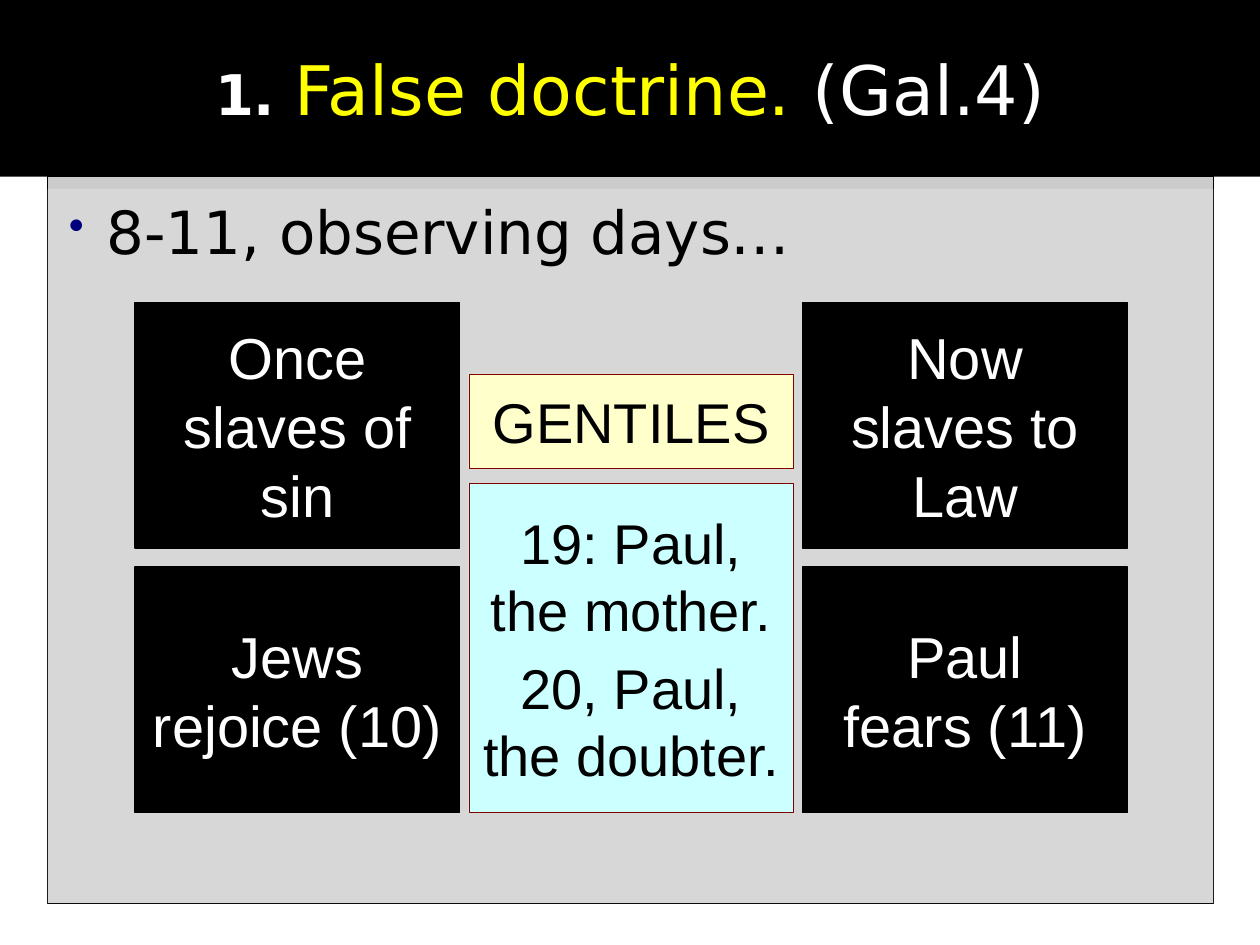
from dataclasses import dataclass
from typing import Optional

from lxml import etree
from pptx import Presentation
from pptx.dml.color import RGBColor
from pptx.enum.shapes import MSO_SHAPE
from pptx.enum.text import MSO_ANCHOR, MSO_AUTO_SIZE, PP_ALIGN
from pptx.oxml.ns import qn
from pptx.util import Cm, Pt

RECT = MSO_SHAPE.RECTANGLE
TOP, MIDDLE = MSO_ANCHOR.TOP, MSO_ANCHOR.MIDDLE
LEFT, CENTER = PP_ALIGN.LEFT, PP_ALIGN.CENTER
NO_AUTOFIT = MSO_AUTO_SIZE.NONE


@dataclass(frozen=True)
class Theme:
    black: str = "000000"
    white: str = "FFFFFF"
    yellow: str = "FFFF00"
    cream: str = "FFFFCC"
    aqua: str = "CCFFFF"
    maroon: str = "800000"
    navy: str = "00007D"
    panel: str = "BFBFBF"
    veil: str = "F2F2F2"
    heading_font: str = "DejaVu Sans"
    box_font: str = "Arial"
    number_size: int = 32
    title_size: int = 39
    body_size: int = 34
    outer_size: int = 33
    center_size: int = 32


T = Theme()


@dataclass(frozen=True)
class Run:
    text: str
    size: int
    color: str
    font: str = T.box_font
    bold: bool = False


@dataclass(frozen=True)
class Box:
    left: float
    top: float
    width: float
    height: float
    fill: str
    line: Optional[str] = None
    line_width: float = 0.75
    alpha: int = 100


def draw_box(slide, box: Box):
    sp = slide.shapes.add_shape(
        RECT, Cm(box.left), Cm(box.top), Cm(box.width), Cm(box.height))
    sp.shadow.inherit = False
    sp.fill.solid()
    sp.fill.fore_color.rgb = RGBColor.from_string(box.fill)
    if box.alpha < 100:
        color = sp._element.spPr.find(qn("a:solidFill"))[0]
        etree.SubElement(color, qn("a:alpha"), val=str(box.alpha * 1000))
    if box.line:
        sp.line.color.rgb = RGBColor.from_string(box.line)
        sp.line.width = Pt(box.line_width)
    else:
        sp.line.fill.background()
    return sp


def write(sp, paragraphs: list[list[Run]], align=CENTER, anchor=MIDDLE,
          space_after: float = 0) -> None:
    tf = sp.text_frame
    tf.word_wrap = True
    tf.auto_size = NO_AUTOFIT
    tf.vertical_anchor = anchor
    for i, runs in enumerate(paragraphs):
        p = tf.paragraphs[0] if i == 0 else tf.add_paragraph()
        p.alignment = align
        if i < len(paragraphs) - 1:
            p.space_after = Pt(space_after)
        for run in runs:
            for n, line in enumerate(run.text.split("\n")):
                if n:
                    p.add_line_break()
                r = p.add_run()
                r.text = line
                r.font.name = run.font
                r.font.size = Pt(run.size)
                r.font.bold = run.bold
                r.font.color.rgb = RGBColor.from_string(run.color)


def add_bullet(p, char: str, color: str, percent: int) -> None:
    pPr = p._p.get_or_add_pPr()
    pPr.set("marL", str(Cm(0.94)))
    pPr.set("indent", str(Cm(-0.76)))
    clr = etree.SubElement(pPr, qn("a:buClr"))
    etree.SubElement(clr, qn("a:srgbClr"), val=color)
    etree.SubElement(pPr, qn("a:buSzPct"), val=str(percent * 1000))
    etree.SubElement(pPr, qn("a:buChar"), char=char)


def draw_title(slide) -> None:
    title = slide.shapes.title
    title.left, title.top = Cm(0), Cm(0)
    title.width, title.height = Cm(25.4), Cm(3.56)
    title.fill.solid()
    title.fill.fore_color.rgb = RGBColor.from_string(T.black)
    write(title, [[
        Run("1. ", T.number_size, T.white, T.heading_font, True),
        Run("False doctrine. ", T.title_size, T.yellow, T.heading_font),
        Run("(Gal.4)", T.title_size, T.white, T.heading_font),
    ]])


def draw_body(slide) -> None:
    draw_box(slide, Box(0.96, 3.56, 23.5, 14.65, T.panel, T.black, alpha=80))
    body = draw_box(slide, Box(0.96, 3.81, 23.5, 14.4, T.veil, alpha=33))
    write(body, [[Run("8-11, observing days…", T.body_size, T.black,
                      T.heading_font)]], LEFT, TOP)
    p = body.text_frame.paragraphs[0]
    p.space_before = Pt(7)
    add_bullet(p, "•", T.navy, 75)


def draw_grid(slide) -> None:
    width, height = 6.55, 4.95
    columns = [2.72 + 6.73 * i for i in range(3)]
    rows = [6.1, 11.43]
    outer = [
        ["Once slaves of sin", "Now\nslaves to Law"],
        ["Jews rejoice (10)", "Paul\nfears (11)"],
    ]
    for top, texts in zip(rows, outer):
        for left, text in zip(columns[::2], texts):
            sp = draw_box(slide, Box(left, top, width, height, T.black, T.black))
            write(sp, [[Run(text, T.outer_size, T.white)]])

    center = [
        (7.54, 1.9, T.cream, ["GENTILES"]),
        (9.74, 6.64, T.aqua, ["19: Paul, the mother.", "20, Paul, the doubter."]),
    ]
    for top, tall, fill, texts in center:
        sp = draw_box(slide, Box(columns[1], top, width, tall, fill,
                                 T.maroon, 0.25))
        write(sp, [[Run(text, T.center_size, T.black)] for text in texts],
              space_after=6)


def main() -> None:
    prs = Presentation()
    prs.slide_width, prs.slide_height = Cm(25.4), Cm(19.05)
    slide = prs.slides.add_slide(prs.slide_layouts[5])
    draw_title(slide)
    draw_body(slide)
    draw_grid(slide)
    prs.save("out.pptx")


if __name__ == "__main__":
    main()
